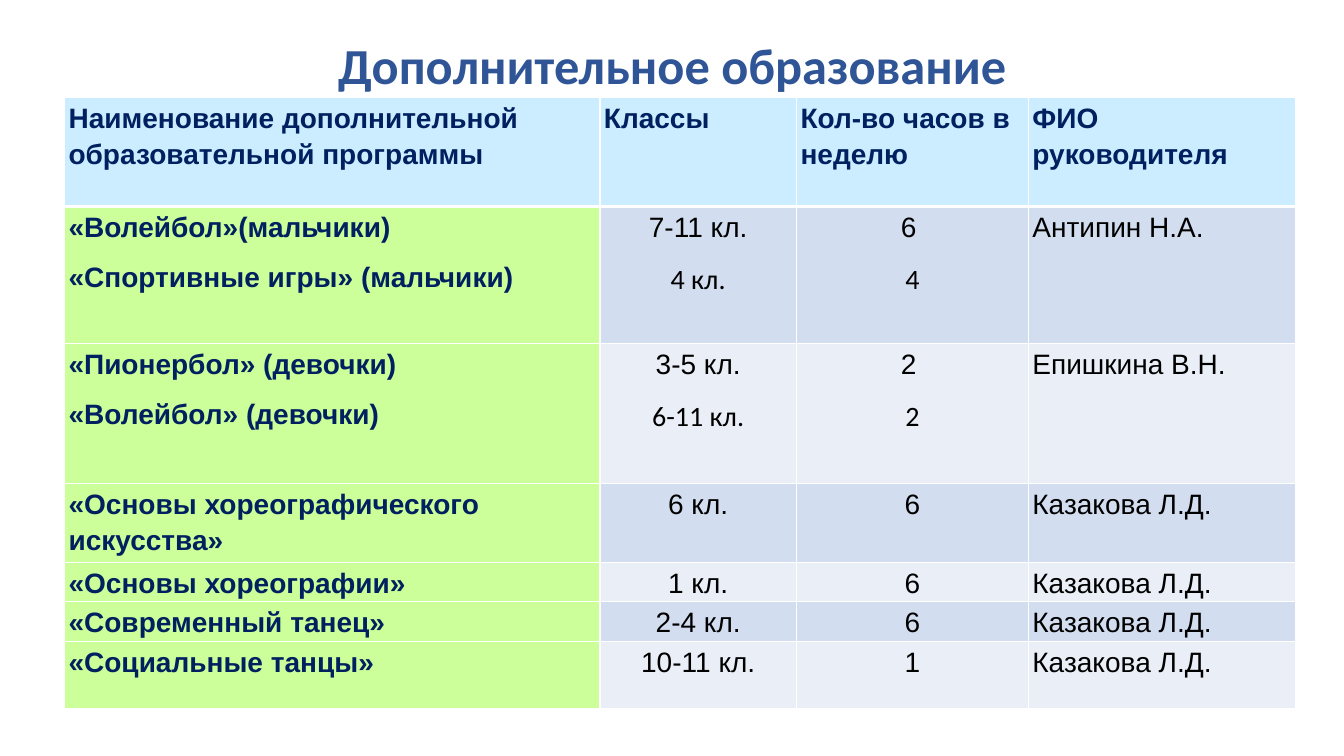
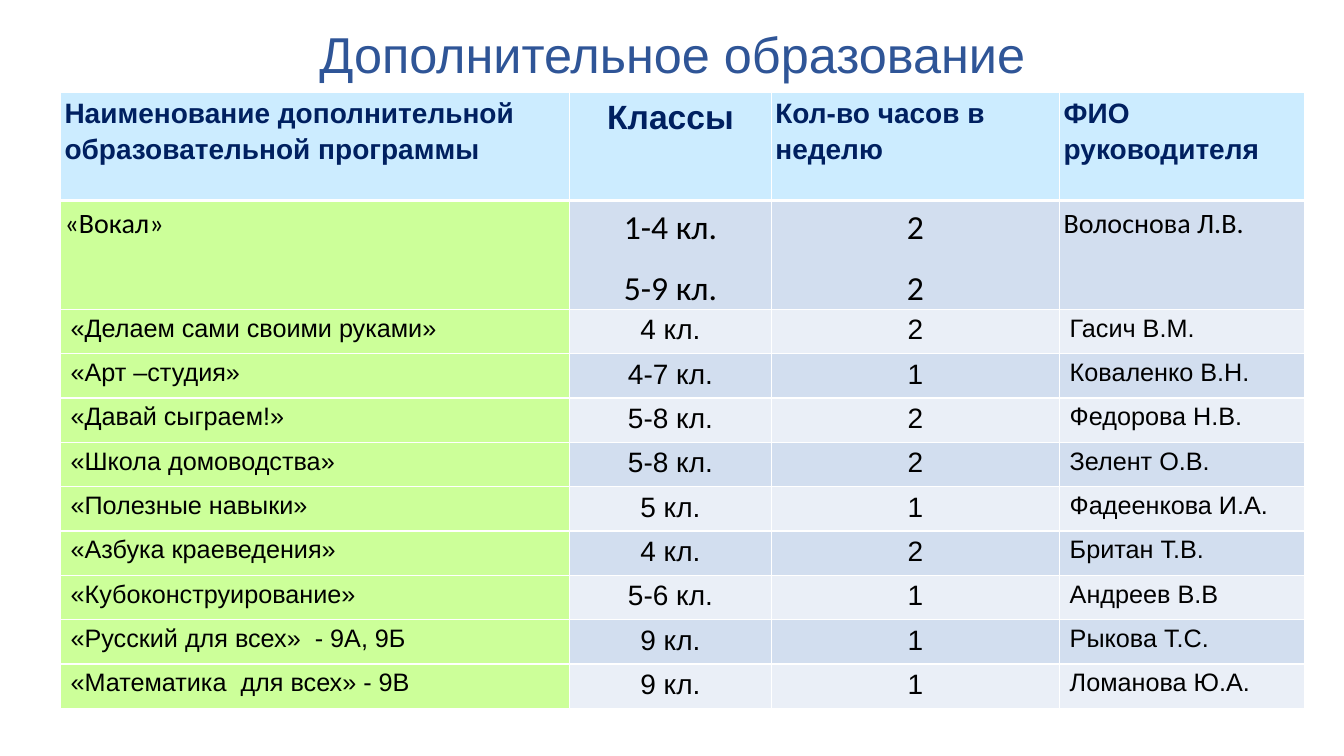
"""Builds two slides listing the after-school programmes of a school."""
from dataclasses import dataclass

from lxml import etree
from pptx import Presentation
from pptx import util as u
from pptx.dml.color import RGBColor
from pptx.enum import text
from pptx.oxml.ns import qn


@dataclass(frozen=True)
class Theme:
    title: str = "2F5597"
    navy: str = "002060"
    black: str = "000000"
    white: str = "FFFFFF"
    header: str = "CCECFF"
    programme: str = "CCFF99"
    bands: tuple = ("D2DEEF", "EAEFF7")
    sans: str = "Arial"
    soft: str = "Calibri"
    title_size: int = 36
    large: int = 24
    medium: int = 20
    small: int = 18
    thin: int = 1
    thick: int = 3


THEME = Theme()
WIDTH, HEIGHT = 13.33, 7.5
TITLE = "Дополнительное образование"
HEADINGS = ("Наименование дополнительной образовательной программы", "Классы",
            "Кол-во часов в неделю", "ФИО руководителя")
CENTERED = (1, 2)
TIGHT = {"margin_left": 0.04, "margin_top": 0.01, "margin_right": 0.04, "margin_bottom": 0}
ROOMY = {"margin_left": 0.1, "margin_top": 0.05, "margin_right": 0.1, "margin_bottom": 0.05}
AIRY = {"line_spacing": 1.15, "space_after": u.Pt(10)}

HEADER = {"sizes": (THEME.medium,) * 4, "fonts": (THEME.sans,), "bold": (0, 1, 2, 3),
          "centered": (), "margins": TIGHT, "spacing": AIRY}
HEADER_LARGE = HEADER | {"sizes": (THEME.medium, THEME.large, THEME.medium, THEME.medium),
                         "centered": (1,)}
CLUB = HEADER | {"fonts": (THEME.sans, THEME.soft), "bold": (0,), "centered": CENTERED}
VOCAL = CLUB | {"sizes": (THEME.medium, THEME.large, THEME.large, THEME.medium),
                "fonts": (THEME.soft,), "bold": ()}
COMPACT = {"sizes": (THEME.small, THEME.medium, THEME.medium, THEME.small),
           "fonts": (THEME.sans,), "bold": (), "centered": CENTERED,
           "margins": ROOMY, "spacing": {}}

SLIDES = (
    {"title_box": (0.92, 0.25, 11.5, 0.78), "title_font": THEME.soft, "title_bold": True,
     "corner": (0.64, 0.97), "columns": (5.31, 1.95, 2.3, 2.65),
     "rows": (
         (1.08, HEADER, HEADINGS),
         (1.36, CLUB, ("«Волейбол»(мальчики)\n«Спортивные игры» (мальчики)",
                       "7-11 кл.\n4 кл.", "6 \n4", "Антипин Н.А.")),
         (1.39, CLUB, ("«Пионербол» (девочки)\n«Волейбол» (девочки)",
                       "3-5 кл.\n6-11 кл.", "2 \n2", "Епишкина В.Н.")),
         (0.72, CLUB, ("«Основы хореографического искусства»", "6 кл.", "6", "Казакова Л.Д.")),
         (0.36, CLUB, ("«Основы хореографии»", "1 кл.", "6", "Казакова Л.Д.")),
         (0.36, CLUB, ("«Современный танец»", "2-4 кл.", "6", "Казакова Л.Д.")),
         (0.67, CLUB, ("«Социальные танцы»", "10-11 кл.", "1", "Казакова Л.Д.")),
     )},
    {"title_box": (0.92, 0.19, 11.5, 0.67), "title_font": THEME.sans, "title_bold": False,
     "corner": (0.6, 0.92), "columns": (5.05, 2, 2.86, 2.43),
     "rows": (
         (1.07, HEADER_LARGE, HEADINGS),
         (1.08, VOCAL, ("«Вокал»", "1-4 кл.\n5-9 кл.", "2\n2", "Волоснова Л.В.")),
         *((0.44, COMPACT, cells) for cells in (
             ("«Делаем сами своими руками»", "4 кл.", "2", "Гасич В.М."),
             ("«Арт –студия»", "4-7 кл.", "1", "Коваленко В.Н."),
             ("«Давай сыграем!»", "5-8 кл.", "2", "Федорова Н.В."),
             ("«Школа домоводства»", "5-8 кл.", "2", "Зелент О.В."),
             ("«Полезные навыки»", "5 кл.", "1", "Фадеенкова И.А."),
             ("«Азбука краеведения»", "4 кл.", "2", "Британ Т.В."),
             ("«Кубоконструирование»", "5-6 кл.", "1", "Андреев В.В"),
             ("«Русский для всех»  - 9А, 9Б", "9 кл.", "1", "Рыкова Т.С."),
             ("«Математика  для всех» - 9В", "9 кл.", "1", "Ломанова Ю.А."),
         )),
     )},
)


def apply(target, values):
    """Set every attribute named in a dict."""
    for name, value in values.items():
        setattr(target, name, value)


def write(para, words, font, size, color, bold, centered):
    """Add one formatted span to a paragraph."""
    para.alignment = text.PP_ALIGN.CENTER if centered else text.PP_ALIGN.LEFT
    span = para.add_run()
    span.text = words
    apply(span.font, {"name": font, "size": u.Pt(size), "bold": bold})
    span.font.color.rgb = RGBColor.from_string(color)


def add_title(page, slide):
    """Place the centred slide title."""
    box = page.shapes.add_textbox(*map(u.Inches, slide["title_box"]))
    frame = box.text_frame
    apply(frame, {"word_wrap": True, "vertical_anchor": text.MSO_ANCHOR.MIDDLE}
          | dict.fromkeys(TIGHT, 0))
    write(frame.paragraphs[0], TITLE, slide["title_font"], THEME.title_size,
          THEME.title, slide["title_bold"], True)


def add_borders(cell, widths):
    """Draw white cell borders, ahead of the fill."""
    properties = cell._tc.get_or_add_tcPr()
    for position, (side, width) in enumerate(widths.items()):
        line = etree.Element(qn(f"a:ln{side}"), w=str(u.Pt(width)))
        fill = etree.SubElement(line, qn("a:solidFill"))
        etree.SubElement(fill, qn("a:srgbClr"), val=THEME.white)
        properties.insert(position, line)


def fill_cell(cell, words, style, row, column):
    """Write and format one table cell."""
    apply(cell, {name: u.Inches(value) for name, value in style["margins"].items()})
    bold = column in style["bold"]
    fonts = style["fonts"]
    for index, line in enumerate(words.split("\n")):
        frame = cell.text_frame
        para = frame.add_paragraph() if index else frame.paragraphs[0]
        apply(para, style["spacing"])
        font = fonts[index % len(fonts)] if column in CENTERED else fonts[0]
        write(para, line, font, style["sizes"][column],
              THEME.navy if bold else THEME.black, bold, column in style["centered"])
    band = THEME.bands[(row + 1) % 2]
    color = THEME.header if row == 0 else THEME.programme if column == 0 else band
    cell.fill.solid()
    cell.fill.fore_color.rgb = RGBColor.from_string(color)
    add_borders(cell, {"L": THEME.thin, "R": THEME.thin,
                       "T": THEME.thick if row == 1 else THEME.thin,
                       "B": THEME.thick if row == 0 else THEME.thin})


def add_programmes(page, slide):
    """Place the table of programmes."""
    rows, columns = slide["rows"], slide["columns"]
    size = sum(columns), sum(height for height, _, _ in rows)
    table = page.shapes.add_table(len(rows), len(columns),
                                  *map(u.Inches, slide["corner"] + size)).table
    for column, width in zip(table.columns, columns):
        column.width = u.Inches(width)
    for row, (height, style, cells) in enumerate(rows):
        table.rows[row].height = u.Inches(height)
        for column, words in enumerate(cells):
            fill_cell(table.cell(row, column), words, style, row, column)


def main():
    """Build and save the deck."""
    deck = Presentation()
    apply(deck, {"slide_width": u.Inches(WIDTH), "slide_height": u.Inches(HEIGHT)})
    for slide in SLIDES:
        page = deck.slides.add_slide(deck.slide_layouts[6])
        add_title(page, slide)
        add_programmes(page, slide)
    deck.save("out.pptx")


if __name__ == "__main__":
    main()
